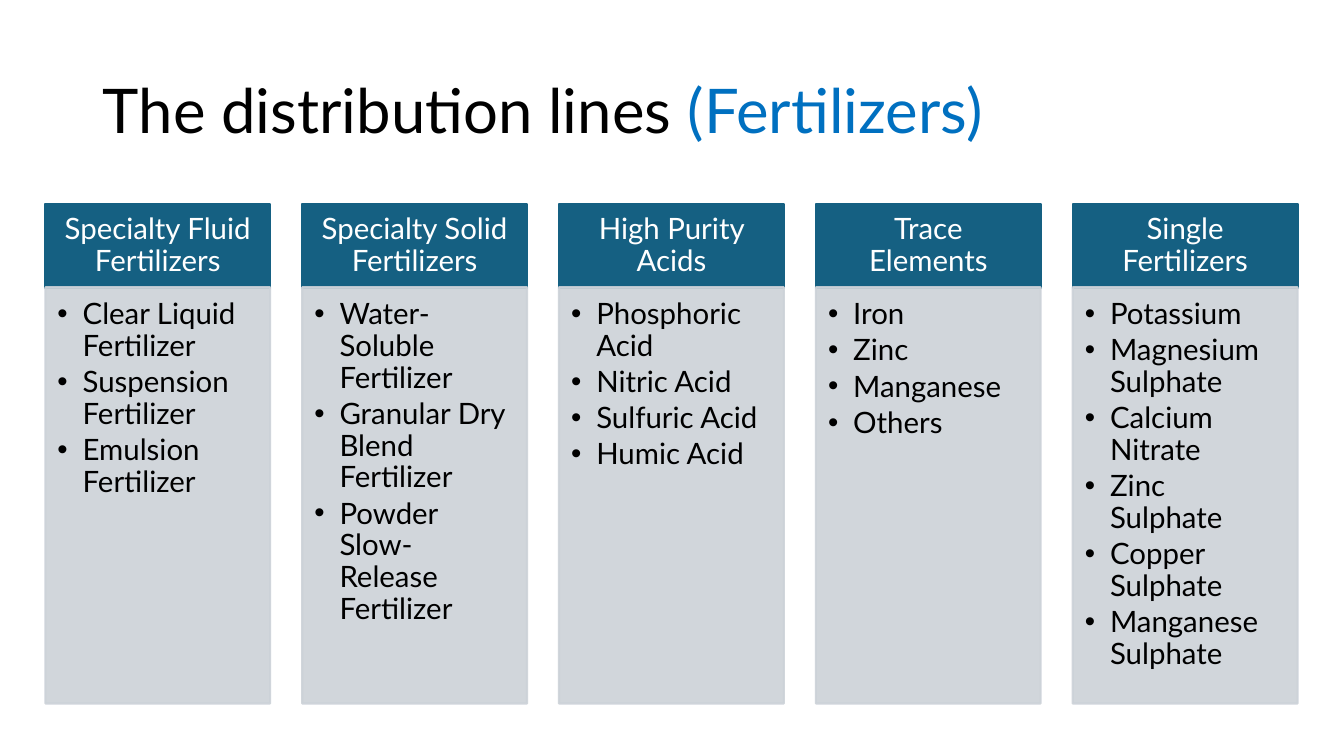
from lxml.etree import SubElement
from pptx import Presentation
from pptx.dml.color import RGBColor
from pptx.enum.shapes import MSO_SHAPE as Shape
from pptx.enum.text import MSO_ANCHOR as Anchor, MSO_AUTO_SIZE as AutoSize, PP_ALIGN as Align
from pptx.oxml.ns import qn
from pptx.util import Inches, Pt

BLACK = RGBColor(0x00, 0x00, 0x00)
WHITE = RGBColor(0xFF, 0xFF, 0xFF)
BLUE = RGBColor(0x00, 0x70, 0xC0)
TEAL = RGBColor(0x15, 0x60, 0x82)
GREY = RGBColor(0xCC, 0xD2, 0xD8)

FIRST_LEFT, LAST_LEFT, COLUMN_WIDTH = 0.45, 10.64, 2.23
HEADER_TOP, HEADER_HEIGHT = 2.02, 0.84
LIST_TOP, LIST_HEIGHT = 2.85, 4.13

PRODUCT_LINES = [
    ("Specialty Fluid Fertilizers",
     ["Clear Liquid Fertilizer", "Suspension Fertilizer", "Emulsion Fertilizer"]),
    ("Specialty Solid Fertilizers",
     ["Water-Soluble Fertilizer", "Granular Dry Blend Fertilizer",
      "Powder Slow-Release Fertilizer"]),
    ("High Purity Acids",
     ["Phosphoric Acid", "Nitric Acid", "Sulfuric Acid", "Humic Acid"]),
    ("Trace Elements", ["Iron", "Zinc", "Manganese", "Others"]),
    ("Single Fertilizers",
     ["Potassium", "Magnesium Sulphate", "Calcium Nitrate", "Zinc Sulphate",
      "Copper Sulphate", "Manganese Sulphate"]),
]


class SlideBuilder:
    """Draw the title, headers and bullet lists of one slide in a shared style."""

    font_name = "Lato"
    title_size = Pt(44)
    body_size = Pt(21)
    line_spacing = 0.9

    def __init__(self, page):
        self.page = page

    def style(self, span, size, color):
        span.font.name = self.font_name
        span.font.size = size
        span.font.color.rgb = color

    def title(self, left, top, width, height, parts):
        box = self.page.shapes.title
        box.left, box.top = Inches(left), Inches(top)
        box.width, box.height = Inches(width), Inches(height)
        frame = box.text_frame
        frame.auto_size = AutoSize.NONE
        frame.vertical_anchor = Anchor.MIDDLE
        para = frame.paragraphs[0]
        para.alignment = Align.LEFT
        para.line_spacing = self.line_spacing
        for text, color in parts:
            span = para.add_run()
            span.text = text
            self.style(span, self.title_size, color)

    def panel(self, left, top, width, height, color, margins, lines):
        box = self.page.shapes.add_shape(
            Shape.RECTANGLE, Inches(left), Inches(top), Inches(width), Inches(height))
        box.shadow.inherit = False
        box.fill.solid()
        box.fill.fore_color.rgb = color
        box.line.color.rgb = color
        box.line.width = Pt(1.5)
        frame = box.text_frame
        frame.word_wrap = True
        (frame.margin_left, frame.margin_top,
         frame.margin_right, frame.margin_bottom) = map(Inches, margins)
        frame.text = "\n".join(lines)
        return box

    def header(self, left, top, width, height, text):
        box = self.panel(left, top, width, height, TEAL, (0.16, 0.09, 0.16, 0.09), [text])
        box.text_frame.vertical_anchor = Anchor.MIDDLE
        para = box.text_frame.paragraphs[0]
        para.alignment = Align.CENTER
        para.line_spacing = self.line_spacing
        self.style(para.runs[0], self.body_size, WHITE)

    def bullet_list(self, left, top, width, height, items):
        box = self.panel(left, top, width, height, GREY, (0.12, 0.12, 0.16, 0.18), items)
        for color in box.element.spPr.iter(qn("a:srgbClr")):
            SubElement(color, qn("a:alpha"), val="90000")
        box.text_frame.vertical_anchor = Anchor.TOP
        for para in box.text_frame.paragraphs:
            properties = para._p.get_or_add_pPr()
            properties.set("marL", str(Inches(0.25)))
            properties.set("indent", str(Inches(-0.25)))
            SubElement(properties, qn("a:buFont"), typeface="Arial")
            SubElement(properties, qn("a:buChar"), char="•")
            para.level = 1
            para.alignment = Align.LEFT
            para.line_spacing = self.line_spacing
            para.space_after = Pt(3.15)
            self.style(para.runs[0], self.body_size, BLACK)


def main():
    deck = Presentation()
    deck.slide_width, deck.slide_height = Inches(13.33), Inches(7.5)
    builder = SlideBuilder(deck.slides.add_slide(deck.slide_layouts[5]))
    builder.title(0.92, 0.4, 11.5, 1.45,
                  [("The distribution lines ", BLACK), ("(Fertilizers)", BLUE)])
    pitch = (LAST_LEFT - FIRST_LEFT) / (len(PRODUCT_LINES) - 1)
    for index, (heading, items) in enumerate(PRODUCT_LINES):
        left = FIRST_LEFT + index * pitch
        builder.header(left, HEADER_TOP, COLUMN_WIDTH, HEADER_HEIGHT, heading)
        builder.bullet_list(left, LIST_TOP, COLUMN_WIDTH, LIST_HEIGHT, items)
    deck.save("out.pptx")


if __name__ == "__main__":
    main()
